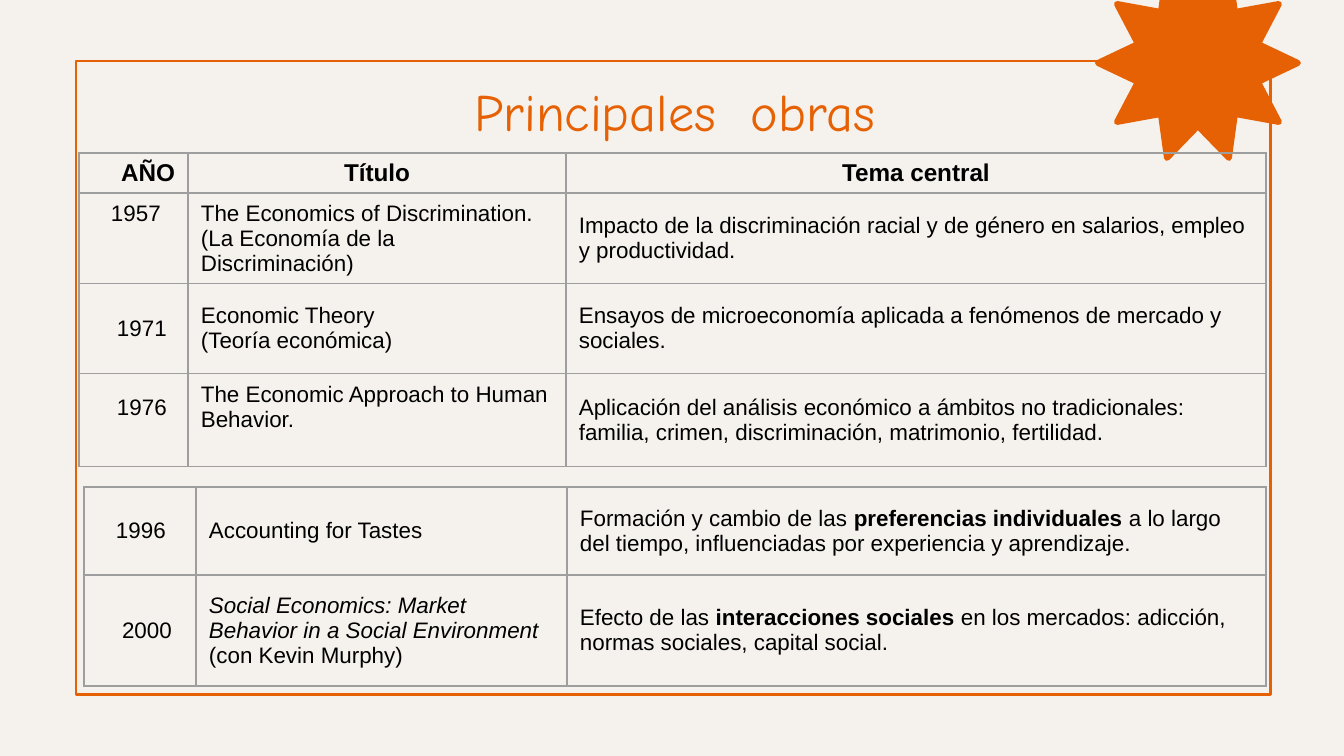
from math import cos, radians, sin

from lxml import etree
from pptx import Presentation
from pptx.dml.color import RGBColor
from pptx.enum.shapes import MSO_SHAPE
from pptx.enum.text import MSO_ANCHOR, PP_ALIGN
from pptx.oxml import parse_xml
from pptx.oxml.ns import nsdecls, qn
from pptx.util import Pt

PX = 914400 / 134.4
LEFT, CENTER = PP_ALIGN.LEFT, PP_ALIGN.CENTER
MIDDLE = MSO_ANCHOR.MIDDLE
RECTANGLE = MSO_SHAPE.RECTANGLE
CREAM, ORANGE, GRAY, BLACK = "F5F1ED", "E66103", "9E9E9E", "000000"
SIDE, EDGE = 13, 5


def px(*lengths):
    return [round(length * PX) for length in lengths]


def write(frame, text, size=12, font="Arial", color=BLACK, bold=False,
          align=LEFT, emphasis="bold"):
    """Fill a text frame; each line is a paragraph, parts between | are emphasised."""
    frame.word_wrap = True
    for number, line in enumerate(text.split("\n")):
        paragraph = frame.add_paragraph() if number else frame.paragraphs[0]
        paragraph.alignment = align
        for index, part in enumerate(line.split("|")):
            if part:
                run = paragraph.add_run()
                run.text = part
                run.font.name, run.font.size = font, Pt(size)
                run.font.bold = bold
                run.font.color.rgb = RGBColor.from_string(color)
                if index % 2:
                    setattr(run.font, emphasis, True)


presentation = Presentation()
presentation.slide_width, presentation.slide_height = px(1344, 756)
slide = presentation.slides.add_slide(presentation.slide_layouts[6])
slide.background.fill.solid()
slide.background.fill.fore_color.rgb = RGBColor.from_string(CREAM)

frame = slide.shapes.add_shape(RECTANGLE, *px(76, 61, 1195, 634))
frame.shadow.inherit = False
frame.fill.solid()
frame.fill.fore_color.rgb = RGBColor.from_string(CREAM)
frame.line.color.rgb = RGBColor.from_string(ORANGE)
frame.line.width = Pt(1.5)

# Ten-pointed star: tips and notches alternate every 18 degrees,
# and a thick round-joined outline softens the tips.
points = []
for step in range(20):
    radius = 63 if step % 2 else 100
    angle = radians(18 * step)
    points.append((round(1198 + radius * cos(angle)), round(63 + radius * sin(angle))))
builder = slide.shapes.build_freeform(*points[0], scale=PX)
builder.add_line_segments(points[1:], close=True)
star = builder.convert_to_shape()
star.shadow.inherit = False
star.fill.solid()
star.fill.fore_color.rgb = RGBColor.from_string(ORANGE)
star.line.color.rgb = RGBColor.from_string(ORANGE)
star.line.width = px(6)[0]
etree.SubElement(star.line._get_or_add_ln(), qn("a:round"))

title = slide.shapes.add_textbox(*px(108, 68, 1133, 85))
title.text_frame.vertical_anchor = MIDDLE
write(title.text_frame, "Principales  obras", size=28, font="Comic Neue",
      color=ORANGE, align=CENTER)

# Row: height, year left margin, year and title bottom margins, cell texts
early_works = [
    (40, 34, EDGE, EDGE, ("AÑO", "Título", "Tema central")),
    (90, 32, 55, EDGE, (
        "1957",
        "The Economics of Discrimination.\n(La Economía de la Discriminación)",
        "Impacto de la discriminación racial y de género en salarios, empleo "
        "y productividad.")),
    (90, 38, EDGE, EDGE, (
        "1971",
        "Economic Theory\n(Teoría económica)",
        "Ensayos de microeconomía aplicada a fenómenos de mercado y sociales.")),
    (93, 38, 30, 30, (
        "1976",
        "The Economic Approach to Human Behavior.",
        "Aplicación del análisis económico a ámbitos no tradicionales: "
        "familia, crimen, discriminación, matrimonio, fertilidad.")),
]
late_works = [
    (88, 32, EDGE, EDGE, (
        "1996",
        "Accounting for Tastes",
        "Formación y cambio de las |preferencias individuales| a lo largo del "
        "tiempo, influenciadas por experiencia y aprendizaje.")),
    (111, 38, EDGE, EDGE, (
        "2000",
        "|Social Economics: Market Behavior in a Social Environment| "
        "(con Kevin Murphy)",
        "Efecto de las |interacciones sociales| en los mercados: adicción, "
        "normas sociales, capital social.")),
]
spacer = [(44, SIDE, EDGE, EDGE, ("",))]
no_line = "<a:noFill/>"
gray_line = f'<a:solidFill><a:srgbClr val="{GRAY}"/></a:solidFill>'
tables = [
    (46, 398, (1252,), spacer, no_line),
    (79, 153, (109, 378, 700), early_works, gray_line),
    (84, 487, (112, 371, 699), late_works, gray_line),
]

for left, top, widths, works, line in tables:
    height = sum(work[0] for work in works)
    table = slide.shapes.add_table(
        len(works), len(widths), *px(left, top, sum(widths), height)).table
    table.first_row = table.horz_banding = False
    for column, width in zip(table.columns, px(*widths)):
        column.width = width
    for row, (height, year_left, year_bottom, title_bottom, texts) in zip(table.rows, works):
        row.height = px(height)[0]
        header = texts[0] == "AÑO"
        lefts = (year_left, SIDE, SIDE)
        bottoms = (year_bottom, title_bottom, EDGE)
        for column, (cell, text) in enumerate(zip(row.cells, texts)):
            right = EDGE if column == 0 else SIDE
            cell.margin_left, cell.margin_right, cell.margin_top, cell.margin_bottom = px(
                lefts[column], right, EDGE, bottoms[column])
            cell.vertical_anchor = MIDDLE
            for side in "LRTB":
                cell._tc.get_or_add_tcPr().append(parse_xml(
                    f'<a:ln{side} {nsdecls("a")} w="{Pt(0.75)}">{line}</a:ln{side}>'))
            cell.fill.background()
            write(cell.text_frame, text, size=13 if header else 12, bold=header,
                  align=CENTER if header else LEFT,
                  emphasis="italic" if column == 1 else "bold")

presentation.save("out.pptx")
